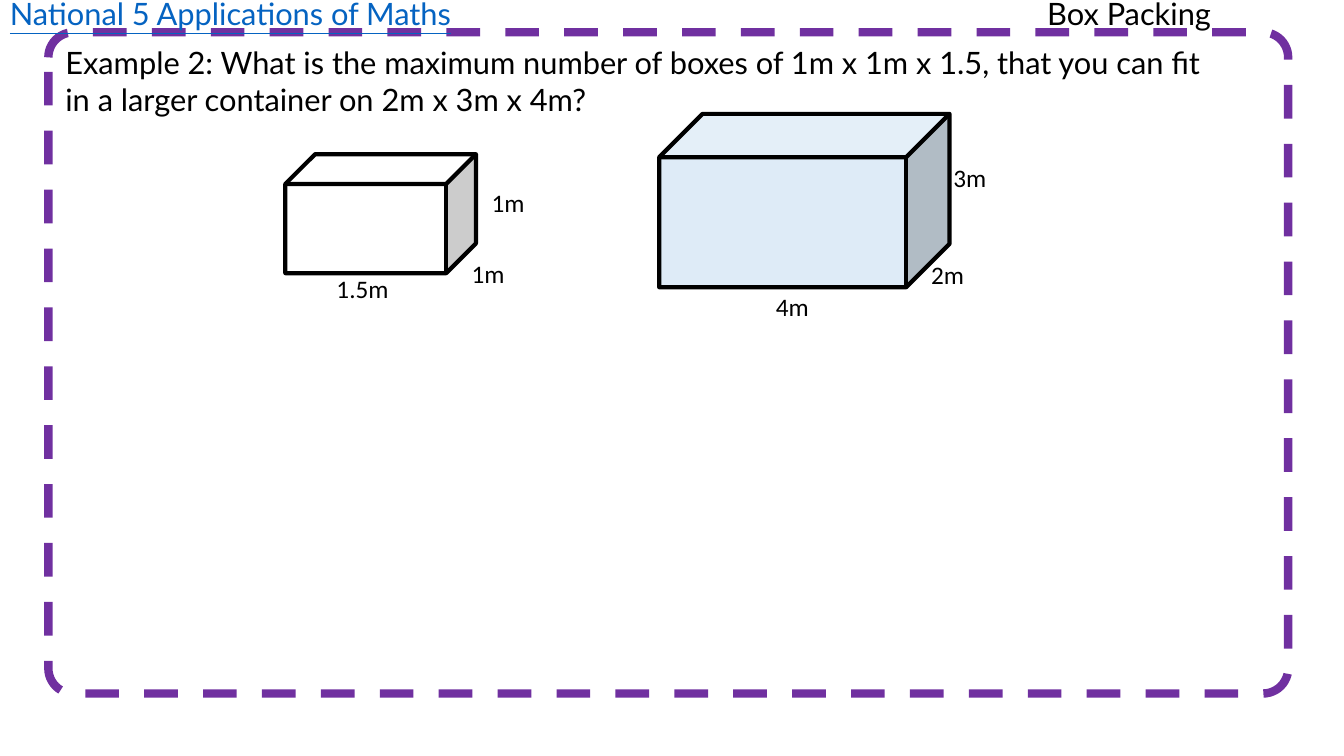
from pptx import Presentation
from pptx.dml.color import RGBColor
from pptx.enum.dml import MSO_LINE
from pptx.enum.shapes import MSO_SHAPE
from pptx.enum.text import MSO_ANCHOR, MSO_AUTO_SIZE, PP_ALIGN
from pptx.util import Inches, Pt

BLACK = RGBColor(0, 0, 0)
WHITE = RGBColor(255, 255, 255)
PURPLE = RGBColor(0x70, 0x30, 0xA0)
BLUE = RGBColor(0x05, 0x63, 0xC1)
PALE = RGBColor(0xDE, 0xEB, 0xF7)

deck = Presentation()
deck.slide_width = Inches(13.33)
deck.slide_height = Inches(7.5)
COL = deck.slide_width / 100
ROW = deck.slide_height / 100
slide = deck.slides.add_slide(deck.slide_layouts[6])


def add_form(kind, left, top, width, height, fill, line, weight):
    form = slide.shapes.add_shape(
        kind, int(left * COL), int(top * ROW), int(width * COL), int(height * ROW))
    form.shadow.inherit = False
    if fill is None:
        form.fill.background()
    else:
        form.fill.solid()
        form.fill.fore_color.rgb = fill
    form.line.color.rgb = line
    form.line.width = Pt(weight)
    return form


def add_label(text, left, top, width, height, font, size, color=BLACK):
    box = slide.shapes.add_textbox(
        int(left * COL), int(top * ROW), int(width * COL), int(height * ROW))
    frame = box.text_frame
    frame.word_wrap = False
    frame.auto_size = MSO_AUTO_SIZE.SHAPE_TO_FIT_TEXT
    line = frame.paragraphs[0]
    line.text = text
    line.font.name = font
    line.font.size = Pt(size)
    line.font.color.rgb = color
    return line


border = add_form(MSO_SHAPE.ROUNDED_RECTANGLE, 3.6, 4.27, 92.25, 87.47, None, PURPLE, 6)
border.adjustments[0] = 0.038
border.line.dash_style = MSO_LINE.DASH

add_label("Box Packing", 77.18, -1.33, 13.73, 6.27, "Lato", 22)
course = add_label("National 5 Applications of Maths", 0, -1.33, 34.73, 6.27, "Lato", 22, BLUE)
course.font.underline = True

task = add_form(MSO_SHAPE.RECTANGLE, 4.13, 7.2, 86.4, 6.93, WHITE, WHITE, 1)
task.text_frame.word_wrap = True
task.text_frame.vertical_anchor = MSO_ANCHOR.MIDDLE
words = task.text_frame.paragraphs[0]
words.text = ("Example 2: What is the maximum number of boxes of 1m x 1m x 1.5, "
              "that you can fit in a larger container on 2m x 3m x 4m?")
words.alignment = PP_ALIGN.LEFT
words.font.name = "Lato"
words.font.size = Pt(22)
words.font.color.rgb = BLACK

cubes = [
    ((21.23, 20.4, 14.18, 15.73), WHITE,
     [("1m", 34.35, 33.47, 3.98), ("1m", 35.85, 24.13, 3.98), ("1.5m", 24.3, 35.47, 5.4)]),
    ((49.05, 15.07, 21.6, 22.93), PALE,
     [("2m", 68.55, 33.6, 3.98), ("3m", 70.2, 20.8, 3.98), ("4m", 57, 37.87, 3.98)]),
]
for place, fill, sides in cubes:
    add_form(MSO_SHAPE.CUBE, *place, fill, BLACK, 3)
    for text, left, top, width in sides:
        add_label(text, left, top, width, 5.33, "Calibri", 18)

deck.save("out.pptx")
